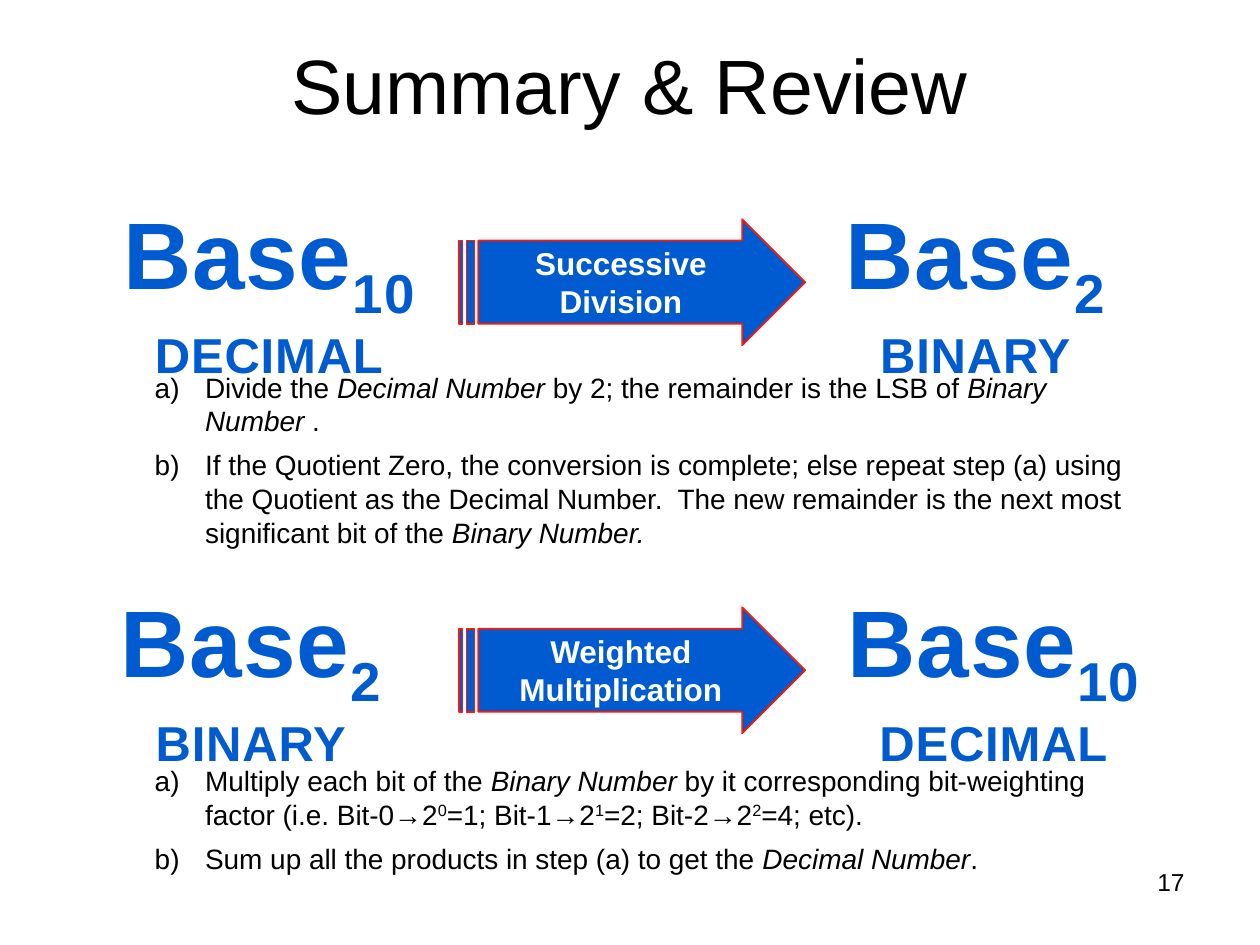
import pptx
import pptx.dml.color
import pptx.enum.shapes
import pptx.enum.text
import pptx.oxml
import pptx.oxml.ns
import pptx.util
from pptx.util import Inches

FONT = "Arial"
BLUE = "005BD0"
RED = "FF1701"
BLACK = "000000"
WHITE = "FFFFFF"
ALIGN = pptx.enum.text.PP_ALIGN
ANCHOR = pptx.enum.text.MSO_ANCHOR
ITALIC = {"i": "1"}
POWER = {"baseline": "30000"}
SUBSCRIPT = {"baseline": "-25000"}
BASES = {"DECIMAL": ("10", 2.61), "BINARY": ("2", 2.32)}

CONVERSIONS = [
    (1.5, "DECIMAL", "BINARY", ["Successive", "Division"]),
    (4.58, "BINARY", "DECIMAL", ["Weighted", "Multiplication"]),
]
DIVISION_STEPS = [
    [("Divide the ", {}), ("Decimal Number ", ITALIC),
     ("by 2; the remainder is the LSB of ", {}),
     ("Binary Number", ITALIC), (" .", {})],
    [("If the Quotient Zero, the conversion is complete; else repeat step (a) "
      "using the Quotient as the Decimal Number.  The new remainder is the "
      "next most significant bit of the ", {}), ("Binary Number.", ITALIC)],
]
MULTIPLICATION_STEPS = [
    [("Multiply each bit of the ", {}), ("Binary Number", ITALIC),
     (" by it corresponding bit-weighting factor (i.e. Bit-0→2", {}),
     ("0", POWER), ("=1; Bit-1→2", {}), ("1", POWER),
     ("=2; Bit-2→2", {}), ("2", POWER), ("=4; etc).", {})],
    [("Sum up all the products in step (a) to get the ", {}),
     ("Decimal Number", ITALIC), (".", {})],
]


def rgb(value):
    return pptx.dml.color.RGBColor.from_string(value)


def xml_element(tag, inner="", **attributes):
    listed = "".join(f' {name}="{value}"' for name, value in attributes.items())
    namespace = pptx.oxml.ns.nsdecls("a")
    return pptx.oxml.parse_xml(f"<a:{tag} {namespace}{listed}>{inner}</a:{tag}>")


def set_font(para, size, color, bold=False):
    font = para.font
    font.name = FONT
    font.size = pptx.util.Pt(size)
    font.bold = bold
    font.color.rgb = rgb(color)


def add_spans(para, spans):
    for text, attributes in spans:
        span = para.add_run()
        span.text = text
        properties = span._r.get_or_add_rPr()
        for name, value in attributes.items():
            properties.set(name, value)


def fill_paragraphs(frame, paragraphs):
    for index, spans in enumerate(paragraphs):
        para = frame.paragraphs[0] if index == 0 else frame.add_paragraph()
        add_spans(para, spans)
    return frame.paragraphs


def add_box(slide, left, top, width, height, paragraphs, wrap=True, grow=False):
    box = slide.shapes.add_textbox(
        Inches(left), Inches(top), Inches(width), Inches(height))
    frame = box.text_frame
    frame.word_wrap = wrap
    if grow:
        frame.auto_size = pptx.enum.text.MSO_AUTO_SIZE.SHAPE_TO_FIT_TEXT
    fill_paragraphs(frame, paragraphs)
    return frame


def add_line_of_text(slide, position, text, size, align, anchor):
    frame = add_box(slide, *position, [[(text, {})]])
    frame.vertical_anchor = anchor
    para = frame.paragraphs[0]
    para.alignment = align
    set_font(para, size, BLACK)


def add_base(slide, left, top, name):
    number, width = BASES[name]
    paragraphs = [[("Base", {}), (number, SUBSCRIPT)], [(name, {})]]
    frame = add_box(slide, left, top, width, 1.48, paragraphs, wrap=False, grow=True)
    for para, size in zip(frame.paragraphs, (54, 28)):
        para.alignment = ALIGN.CENTER
        set_font(para, size, BLUE, bold=True)
        for span in para.runs:
            properties = span._r.get_or_add_rPr()
            properties.set("spc", "50")
            outline = f'<a:solidFill><a:srgbClr val="{RED}"/></a:solidFill>'
            properties.insert(0, xml_element("ln", outline, w=pptx.util.Pt(0.9)))


def add_arrow(slide, top, lines):
    arrow = slide.shapes.add_shape(
        pptx.enum.shapes.MSO_SHAPE.STRIPED_RIGHT_ARROW,
        Inches(3.64), Inches(top), Inches(2.75), Inches(1))
    arrow.adjustments[0] = 0.66
    arrow.adjustments[1] = 0.5
    arrow.shadow.inherit = False
    arrow.fill.solid()
    arrow.fill.fore_color.rgb = rgb(BLUE)
    arrow.line.color.rgb = rgb(RED)
    arrow.line.width = pptx.util.Pt(1)
    frame = arrow.text_frame
    frame.vertical_anchor = ANCHOR.MIDDLE
    for para in fill_paragraphs(frame, [[(line, {})] for line in lines]):
        para.alignment = ALIGN.CENTER
        set_font(para, 18, WHITE, bold=True)


def add_steps(slide, top, width, height, steps):
    frame = add_box(slide, 0.83, top, width, height, steps, grow=True)
    for para in frame.paragraphs:
        para.level = 1
        para.space_after = pptx.util.Pt(6)
        properties = para._p.get_or_add_pPr()
        properties.set("marL", str(Inches(0.7)))
        properties.set("indent", str(Inches(-0.4)))
        properties.append(xml_element("buFont", typeface="+mj-lt"))
        properties.append(xml_element("buAutoNum", type="alphaLcParenR"))
        set_font(para, 16, BLACK)


def add_conversion(slide, top, source, target, method):
    add_base(slide, 0.83, top, source)
    add_base(slide, 6.58, top, target)
    add_arrow(slide, top + 0.24, method)


def main():
    deck = pptx.Presentation()
    deck.slide_width = Inches(10)
    deck.slide_height = Inches(7.5)
    slide = deck.slides.add_slide(deck.slide_layouts[6])
    add_line_of_text(slide, (0, 0, 10, 1.33), "Summary & Review", 44,
                     ALIGN.CENTER, ANCHOR.MIDDLE)
    for conversion in CONVERSIONS:
        add_conversion(slide, *conversion)
    add_steps(slide, 2.89, 8.3, 1.53, DIVISION_STEPS)
    add_steps(slide, 6.01, 8.2, 0.99, MULTIPLICATION_STEPS)
    add_line_of_text(slide, (7.17, 6.83, 2.33, 0.52), "17", 14,
                     ALIGN.RIGHT, ANCHOR.TOP)
    deck.save("out.pptx")


if __name__ == "__main__":
    main()
